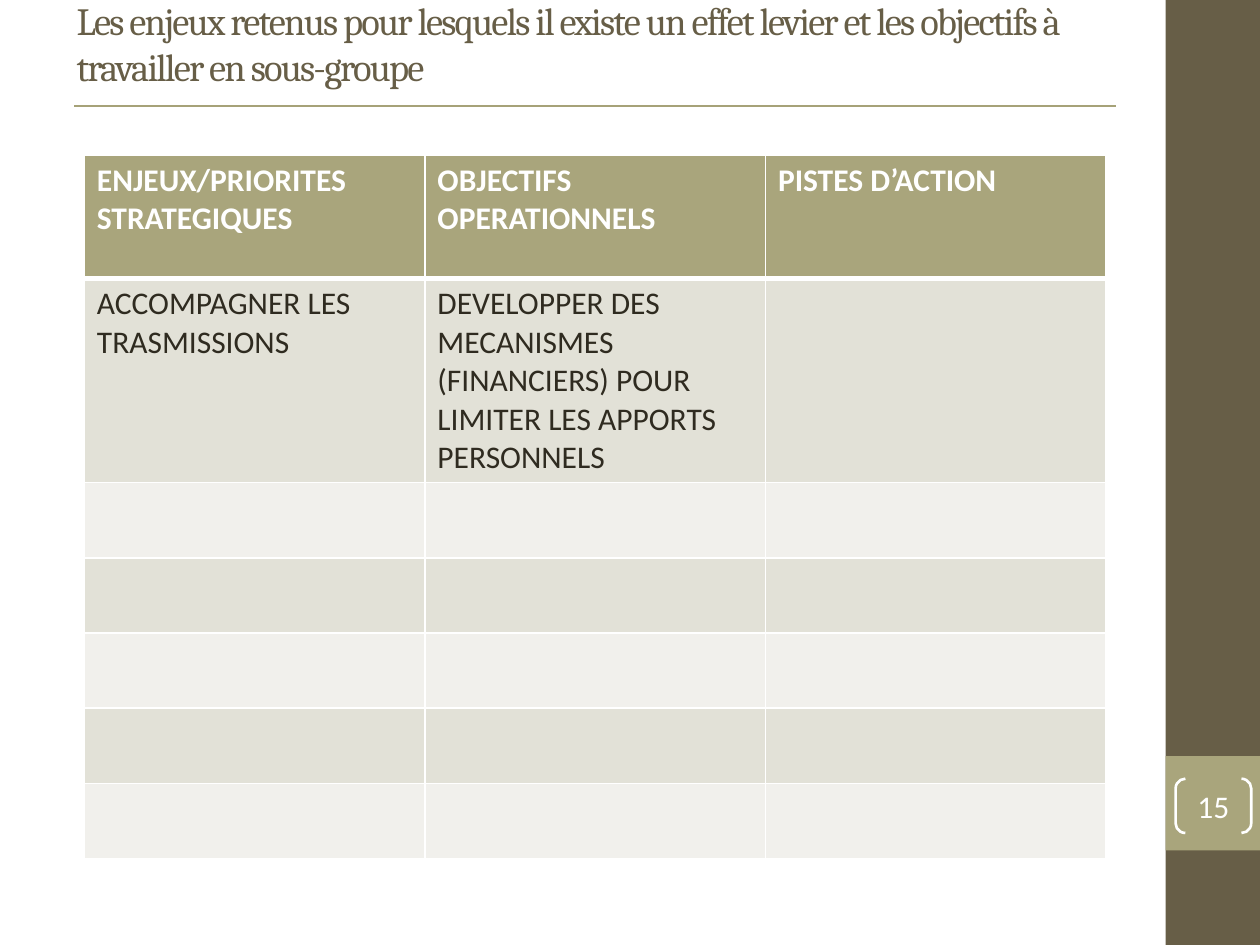
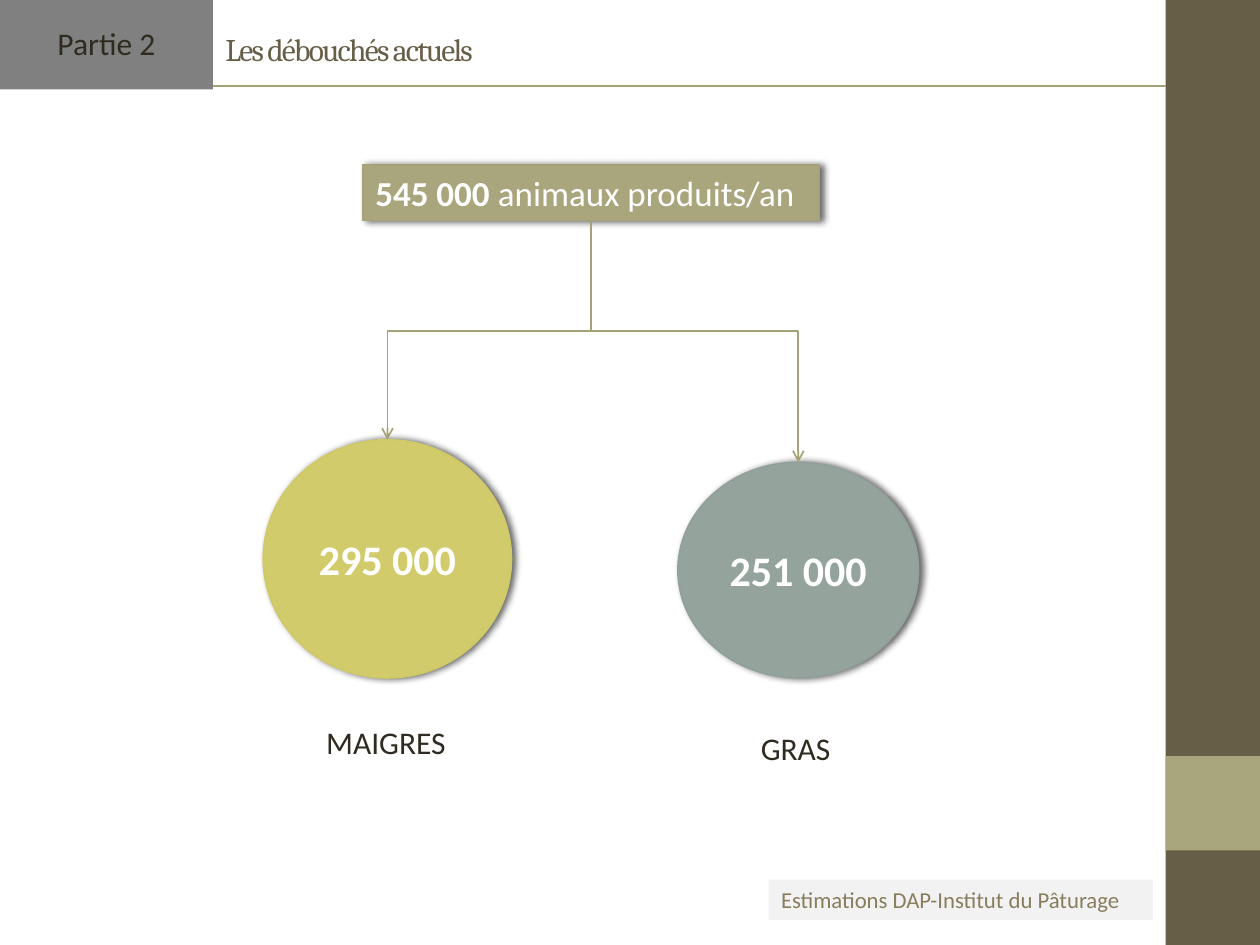
from dataclasses import dataclass

from lxml import etree
from pptx import Presentation
from pptx.dml.color import RGBColor
from pptx.enum.shapes import MSO_CONNECTOR, MSO_SHAPE
from pptx.enum.text import MSO_ANCHOR, PP_ALIGN
from pptx.oxml.ns import qn
from pptx.util import Pt

RECT = MSO_SHAPE.RECTANGLE
OVAL = MSO_SHAPE.OVAL
BRACKETS = MSO_SHAPE.DOUBLE_BRACKET
STRAIGHT = MSO_CONNECTOR.STRAIGHT
ELBOW = MSO_CONNECTOR.ELBOW
TOP = MSO_ANCHOR.TOP
MIDDLE = MSO_ANCHOR.MIDDLE
LEFT = PP_ALIGN.LEFT
CENTER = PP_ALIGN.CENTER

BODY_FONT, TITLE_FONT = "Calibri", "Cambria"
WHITE, INK, BROWN, OLIVE, RULE = "FFFFFF", "2F2B20", "675E47", "A9A57C", "A6A278"
BANDS = ("E2E1D7", "F1F0EC")
BAND_LEFT, BAND_WIDTH = 666, 54

HEADERS = ("ENJEUX/PRIORITES STRATEGIQUES", "OBJECTIFS OPERATIONNELS", "PISTES D’ACTION")
FIRST_ROW = (
    "ACCOMPAGNER LES TRASMISSIONS",
    "DEVELOPPER DES MECANISMES (FINANCIERS) POUR LIMITER LES APPORTS PERSONNELS",
    "",
)
ROW_HEIGHTS = (70.6, 116.6) + (43,) * 5


@dataclass
class Text:
    runs: tuple
    size: float = 18
    color: str = INK
    font: str = BODY_FONT
    bold: bool = False
    align: PP_ALIGN = LEFT
    anchor: MSO_ANCHOR = TOP
    spacing: int = 0
    wrap: bool = True
    inset: bool = True


@dataclass
class Box:
    left: float
    top: float
    width: float
    height: float
    fill: str = ""
    line: str = ""
    line_width: float = 1
    kind: MSO_SHAPE = RECT
    shadow: bool = False
    text: Text | None = None


def rgb(color: str) -> RGBColor:
    return RGBColor.from_string(color)


def add_node(parent, tag: str, **attrs):
    return etree.SubElement(parent, qn(tag), {k: str(v) for k, v in attrs.items()})


def set_font(font, text: Text) -> None:
    font.name, font.size, font.bold = text.font, Pt(text.size), text.bold
    font.color.rgb = rgb(text.color)


def write(tf, text: Text) -> None:
    tf.word_wrap = text.wrap
    tf.vertical_anchor = text.anchor
    if not text.inset:
        tf.margin_left = tf.margin_right = tf.margin_top = tf.margin_bottom = 0
    p = tf.paragraphs[0]
    p.alignment = text.align
    set_font(p.font, text)
    for i, content in enumerate(text.runs):
        r = p.add_run()
        r.text = content
        if i:
            r.font.bold = False
        if text.spacing:
            r._r.get_or_add_rPr().set("spc", str(text.spacing))


def add_shadow(sp) -> None:
    effects = sp.element.spPr.find(qn("a:effectLst"))
    outer = add_node(effects, "a:outerShdw", blurRad=Pt(4), dist=Pt(2), dir=0, rotWithShape=0)
    add_node(add_node(outer, "a:srgbClr", val="000000"), "a:alpha", val=60000)


def draw_box(s, box: Box):
    place = [Pt(v) for v in (box.left, box.top, box.width, box.height)]
    if box.fill or box.line:
        sp = s.shapes.add_shape(box.kind, *place)
        sp.shadow.inherit = False
        if box.fill:
            sp.fill.solid()
            sp.fill.fore_color.rgb = rgb(box.fill)
        else:
            sp.fill.background()
        if box.line:
            sp.line.color.rgb = rgb(box.line)
            sp.line.width = Pt(box.line_width)
        else:
            sp.line.fill.background()
        if box.shadow:
            add_shadow(sp)
    else:
        sp = s.shapes.add_textbox(*place)
    if box.text:
        write(sp.text_frame, box.text)
    return sp


def draw_line(s, kind: MSO_CONNECTOR, x1: float, y1: float, x2: float, y2: float):
    cn = s.shapes.add_connector(kind, Pt(x1), Pt(y1), Pt(x2), Pt(y2))
    cn.line.color.rgb = rgb(RULE)
    cn.line.width = Pt(1)
    add_node(cn.element.spPr, "a:effectLst")
    return cn


def draw_branch(s, x1: float, y1: float, x2: float, y2: float, bend_y: float) -> None:
    """Draw an elbow arrow that leaves downwards, turns at bend_y and ends downwards."""
    drop, spread = y2 - y1, abs(x2 - x1)
    left, top = (x1 + x2 - drop) / 2, (y1 + y2 - spread) / 2
    ends = (left, left + drop) if x2 < x1 else (left + drop, left)
    cn = draw_line(s, ELBOW, ends[0], top, ends[1], top + spread)
    cn.element.spPr.xfrm.set("rot", str((90 if x2 < x1 else 270) * 60000))
    geom = cn.element.spPr.find(qn("a:prstGeom"))
    av = geom.find(qn("a:avLst"))
    if av is None:
        av = add_node(geom, "a:avLst")
    add_node(av, "a:gd", name="adj1", fmla=f"val {round((bend_y - y1) / drop * 100000)}")
    add_node(cn.line._get_or_add_ln(), "a:tailEnd", type="arrow")


def draw_title(s, left: float, top: float, width: float, height: float,
               content: str, size: float) -> None:
    text = Text((content,), size, BROWN, TITLE_FONT, anchor=MIDDLE, spacing=-100)
    draw_box(s, Box(left, top, width, height, text=text))


def new_slide(prs):
    s = prs.slides.add_slide(prs.slide_layouts[6])
    draw_box(s, Box(BAND_LEFT, 0, BAND_WIDTH, 540, BROWN))
    draw_box(s, Box(BAND_LEFT, 432, BAND_WIDTH, BAND_WIDTH, OLIVE))
    return s


def style_cell(cell, fill: str, bottom: float) -> None:
    tc_pr = cell._tc.get_or_add_tcPr()
    for side, width in (("L", 1), ("R", 1), ("T", 1), ("B", bottom)):
        ln = add_node(tc_pr, f"a:ln{side}", w=Pt(width))
        add_node(add_node(ln, "a:solidFill"), "a:srgbClr", val=WHITE)
    cell.fill.solid()
    cell.fill.fore_color.rgb = rgb(fill)


def draw_goals_table(s) -> None:
    shape = s.shapes.add_table(len(ROW_HEIGHTS), len(HEADERS), Pt(48.2), Pt(88.6),
                               Pt(583.8), Pt(sum(ROW_HEIGHTS)))
    table = shape.table
    for col in table.columns:
        col.width = Pt(194.6)
    for i, height in enumerate(ROW_HEIGHTS):
        table.rows[i].height = Pt(height)
        for j in range(len(HEADERS)):
            cell = table.cell(i, j)
            style_cell(cell, BANDS[(i - 1) % 2] if i else OLIVE, 1 if i else 3)
            content = (HEADERS, FIRST_ROW)[i][j] if i < 2 else ""
            if content:
                color = INK if i else WHITE
                write(cell.text_frame, Text((content,), color=color, bold=i == 0))


def build_goals(prs) -> None:
    s = new_slide(prs)
    number = Text(("15",), color=WHITE, align=CENTER, anchor=MIDDLE, inset=False)
    sp = draw_box(s, Box(671.8, 445, 43.2, 31, line=WHITE, line_width=1.5,
                         kind=BRACKETS, text=number))
    sp.adjustments[0] = 0.18
    draw_title(s, 36.7, 5.8, 599.8, 37.4,
               "Les enjeux retenus pour lesquels il existe un effet levier "
               "et les objectifs à travailler en sous-groupe", 22)
    draw_line(s, STRAIGHT, 42.5, 60.5, 637.9, 60.5)
    draw_goals_table(s)


def build_outlets(prs) -> None:
    s = new_slide(prs)
    draw_title(s, 121.7, 9.4, 555.8, 36.7, "Les débouchés actuels", 18)
    draw_line(s, STRAIGHT, 20.2, 49, BAND_LEFT, 49)
    source = Text(("Estimations DAP-Institut du Pâturage",), 13, "897D5D")
    part = Text(("Partie 2",), align=CENTER, anchor=MIDDLE)
    total_text = Text(("545 000 ", "animaux produits/an"), 20, WHITE, bold=True)
    total = Box(207.4, 94.3, 260.6, 31.7, OLIVE, RULE, shadow=True, text=total_text)
    lean = Box(150.5, 251.3, 141.8, 136.1, "D2CB6C", "D0C967", kind=OVAL, shadow=True,
               text=Text(("295 000",), 24, WHITE, bold=True, align=CENTER, anchor=MIDDLE))
    fat = Box(387.4, 264.2, 137.5, 123.1, "95A39D", "91A09A", kind=OVAL, shadow=True,
              text=Text(("251 000",), 24, WHITE, bold=True, align=CENTER, anchor=MIDDLE))
    for box in (
        Box(439.2, 502.6, 219.6, 23, "F2F2F2", text=source),
        Box(0, -2.2, 121.7, 53.3, "808080", text=part),
        total, lean, fat,
        Box(179.3, 409.7, 83.5, 28.8, text=Text(("MAIGRES",), wrap=False)),
        Box(427.7, 413.3, 54.7, 28.8, text=Text(("GRAS",), wrap=False)),
    ):
        draw_box(s, box)
    for target in (lean, fat):
        draw_branch(s, total.left + total.width / 2, total.top + total.height,
                    target.left + target.width / 2, target.top, 189)


def main() -> None:
    prs = Presentation()
    prs.slide_width, prs.slide_height = Pt(720), Pt(540)
    build_goals(prs)
    build_outlets(prs)
    prs.save("out.pptx")


if __name__ == "__main__":
    main()
